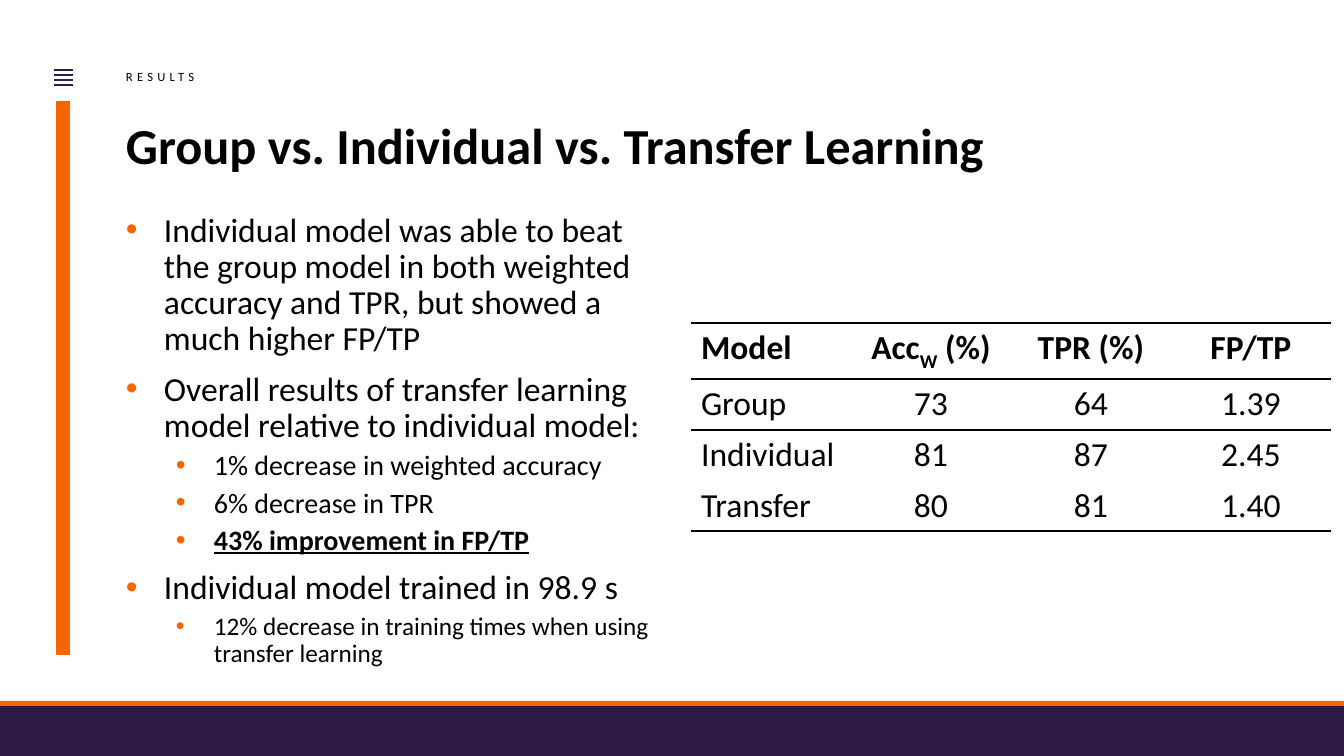
"""Build the results slide comparing group, individual and transfer learning."""
from lxml.etree import SubElement
from pptx import Presentation
from pptx.dml.color import RGBColor
from pptx.enum.shapes import MSO_CONNECTOR as CONNECTOR, MSO_SHAPE as SHAPE
from pptx.enum.text import PP_ALIGN as ALIGN
from pptx.oxml.ns import qn
from pptx.util import Emu, Pt

PURPLE = RGBColor(0x2E, 0x1A, 0x47)
ORANGE = RGBColor(0xF5, 0x66, 0x00)
BLACK = RGBColor(0, 0, 0)
FONT = "Calibri"
EMU_PER_PX = 914400 / 100.8

BULLETS = [
    (0, 24, False, "Individual model was able to beat the group model in both "
                   "weighted accuracy and TPR, but showed a much higher FP/TP"),
    (0, 24, False, "Overall results of transfer learning model relative to individual model:"),
    (1, 20, False, "1% decrease in weighted accuracy"),
    (1, 20, False, "6% decrease in TPR"),
    (1, 20, True, "43% improvement in FP/TP"),
    (0, 24, False, "Individual model trained in 98.9 s"),
    (1, 18, False, "12% decrease in training times when using transfer learning"),
]
RESULTS = [
    ("Model", ("Acc", "W", " (%)"), "TPR (%)", "FP/TP"),
    ("Group", "73", "64", "1.39"),
    ("Individual", "81", "87", "2.45"),
    ("Transfer", "80", "81", "1.40"),
]
ROW_HEIGHTS = [56, 51, 50, 50]
RULE_WIDTHS = [2.25, 1, 1.5, 0, 1.5]


def px(length):
    return Emu(round(length * EMU_PER_PX))


def style_font(font, size, bold=False):
    font.name = FONT
    font.size = Pt(size)
    font.bold = bold
    font.color.rgb = BLACK


def add_line(slide, start, end, color, width):
    line = slide.shapes.add_connector(CONNECTOR.STRAIGHT, *map(px, start + end))
    line.line.color.rgb = color
    line.line.width = Pt(width)
    SubElement(line._element.spPr, qn("a:effectLst"))


def add_bar(slide, top, height, color):
    bar = slide.shapes.add_shape(SHAPE.RECTANGLE, 0, px(top), px(1344), px(height))
    bar.shadow.inherit = False
    bar.fill.solid()
    bar.fill.fore_color.rgb = color
    bar.line.fill.background()


def add_text_frame(slide, left, top, width, height):
    frame = slide.shapes.add_textbox(*map(px, (left, top, width, height))).text_frame
    frame.word_wrap = True
    frame.margin_left = frame.margin_right = frame.margin_top = frame.margin_bottom = 0
    return frame


def add_label(slide, box, text, size, line_spacing, bold=False, tracking=0):
    paragraph = add_text_frame(slide, *box).paragraphs[0]
    run = paragraph.add_run()
    run.text = text
    paragraph.line_spacing = line_spacing
    style_font(paragraph.font, size, bold)
    if tracking:
        run._r.get_or_add_rPr().set("spc", str(tracking * 100))


def add_bullet_mark(paragraph, level):
    properties = paragraph._p.get_or_add_pPr()
    properties.set("marL", str(px(88 if level else 38)))
    properties.set("indent", str(px(-38)))
    color = SubElement(properties, qn("a:buClr"))
    SubElement(color, qn("a:srgbClr"), val=str(ORANGE))
    SubElement(properties, qn("a:buFont"), typeface="Arial")
    SubElement(properties, qn("a:buChar"), char="•")


def add_bullets(slide):
    frame = add_text_frame(slide, 126, 213, 546, 460)
    for index, (level, size, emphasis, text) in enumerate(BULLETS):
        paragraph = frame.add_paragraph() if index else frame.paragraphs[0]
        paragraph.text = text
        paragraph.level = level
        paragraph.line_spacing = 0.9
        if index:
            paragraph.space_before = Pt(5 if level else 10)
        add_bullet_mark(paragraph, level)
        style_font(paragraph.font, size, emphasis)
        paragraph.font.underline = emphasis


def set_borders(cell, top, bottom):
    properties = cell._tc.get_or_add_tcPr()
    for side, width in (("L", 0), ("R", 0), ("T", top), ("B", bottom)):
        border = SubElement(properties, qn(f"a:ln{side}"), w=str(Pt(width)))
        if width:
            fill = SubElement(border, qn("a:solidFill"))
            SubElement(fill, qn("a:srgbClr"), val=str(BLACK))
        else:
            SubElement(border, qn("a:noFill"))


def fill_cell(cell, content, row, column):
    set_borders(cell, RULE_WIDTHS[row], RULE_WIDTHS[row + 1])
    cell.fill.background()
    paragraph = cell.text_frame.paragraphs[0]
    parts = (content,) if isinstance(content, str) else content
    for index, part in enumerate(parts):
        run = paragraph.add_run()
        run.text = part
        if index == 1:
            run._r.get_or_add_rPr().set("baseline", "-25000")
    paragraph.alignment = ALIGN.CENTER if column else ALIGN.LEFT
    style_font(paragraph.font, 24, bold=row == 0)


def add_results_table(slide):
    table = slide.shapes.add_table(
        len(RESULTS), len(RESULTS[0]), px(691), px(323), px(640), px(sum(ROW_HEIGHTS))
    ).table
    table.first_row = table.horz_banding = False
    for column in table.columns:
        column.width = px(160)
    for row, contents in enumerate(RESULTS):
        table.rows[row].height = px(ROW_HEIGHTS[row])
        for column, content in enumerate(contents):
            fill_cell(table.cell(row, column), content, row, column)


def main():
    presentation = Presentation()
    presentation.slide_width, presentation.slide_height = px(1344), px(756)
    slide = presentation.slides.add_slide(presentation.slide_layouts[6])
    for y in range(70, 90, 5):
        add_line(slide, (54, y), (73, y), PURPLE, 1.75)
    add_line(slide, (63, 101), (63, 655), ORANGE, 10)
    add_bar(slide, 706, 50, PURPLE)
    add_bar(slide, 701, 5, ORANGE)
    add_bullets(slide)
    add_label(slide, (126, 126, 951, 50), "Group vs. Individual vs. Transfer Learning",
              36, 0.8, bold=True)
    add_label(slide, (126, 71, 420, 14), "RESULTS", 9, 0.9, tracking=3)
    add_results_table(slide)
    presentation.save("out.pptx")


if __name__ == "__main__":
    main()
